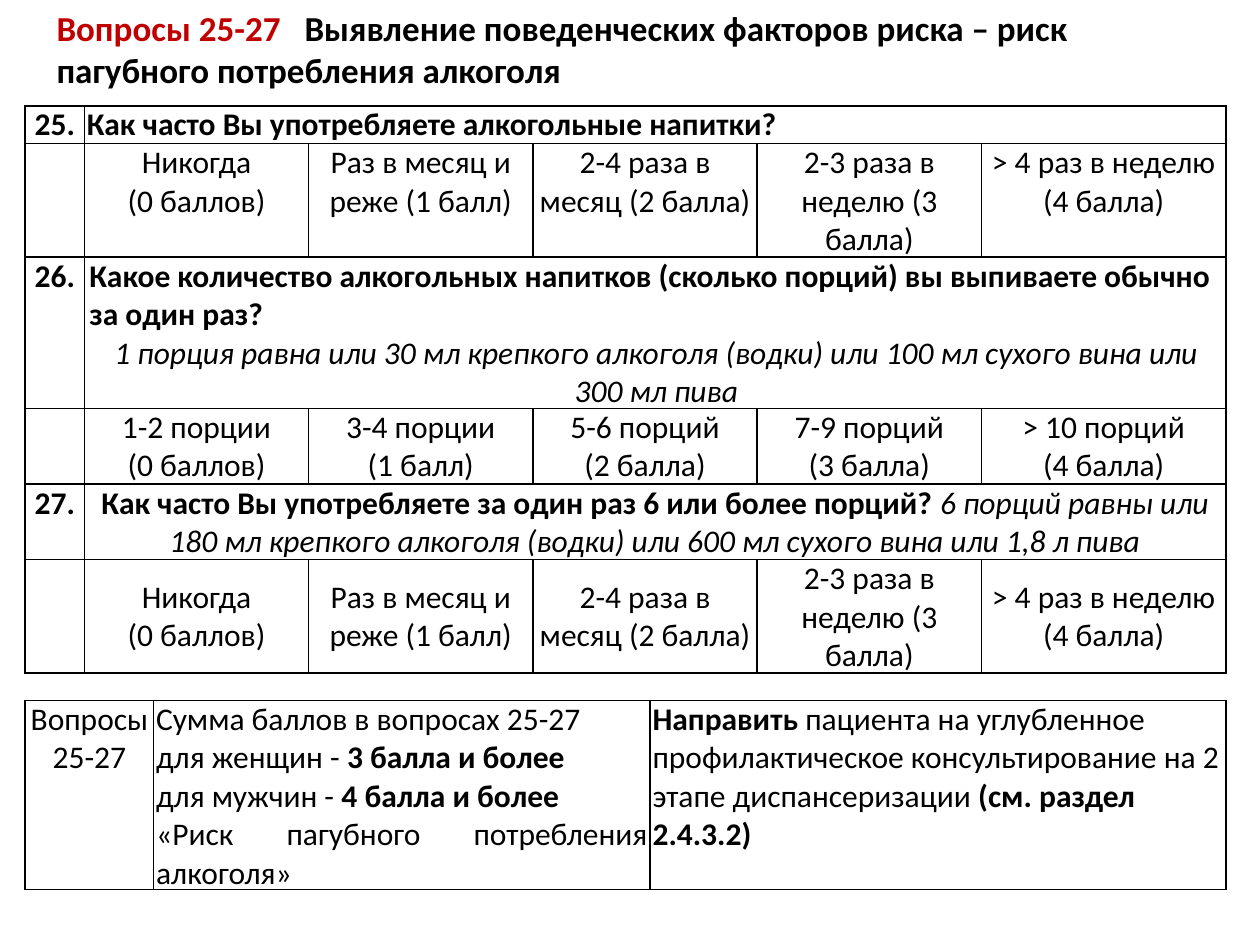
from dataclasses import dataclass
from lxml import etree
from pptx import Presentation
from pptx import util as u
from pptx.dml.color import RGBColor
from pptx.enum import text as t
from pptx.oxml.ns import qn

LEFT, MID, JUST = t.PP_ALIGN.LEFT, t.PP_ALIGN.CENTER, t.PP_ALIGN.JUSTIFY
TOP, CORE = t.MSO_ANCHOR.TOP, t.MSO_ANCHOR.MIDDLE


@dataclass(frozen=True)
class Theme:
    """Colours, font and sizes of the slide."""
    ink: str = "000000"
    mark: str = "C00000"
    font: str = "Calibri"
    head: int = 20
    body: int = 18
    line: int = 1
    pad: float = 0.02


THEME = Theme()
OFTEN = ["Никогда\n(0 баллов)", "Раз в месяц и реже (1 балл)",
         "2-4 раза в месяц (2 балла)", "2-3 раза в неделю (3 балла)",
         "> 4 раз в неделю (4 балла)"]
COUNT = ["1-2 порции\n(0 баллов)", "3-4 порции\n(1 балл)",
         "5-6 порций\n(2 балла)", "7-9 порций\n(3 балла)",
         "> 10 порций\n(4 балла)"]
ASKS = [
    ("25.", [(LEFT, [("Как часто Вы употребляете алкогольные напитки?", "b")])],
     OFTEN, TOP, 0),
    ("26.", [(LEFT, [("Какое количество алкогольных напитков (сколько порций) "
                      "вы выпиваете обычно за один раз?", "b")]),
             (MID, [("1 порция равна или 30 мл крепкого алкоголя (водки) или "
                     "100 мл сухого вина или 300 мл пива", "i")])],
     COUNT, CORE, 0.02),
    ("27.", [(MID, [("Как часто Вы употребляете за один раз 6 или более порций? ", "b"),
                    ("6 порций равны или 180 мл крепкого алкоголя (водки) или "
                     "600 мл сухого вина или 1,8 л пива", "i")])],
     OFTEN, CORE, 0),
]
RESULT = [
    [(MID, [("Вопросы", "")]), (MID, [("25-27", "")])],
    [(JUST, [("Сумма баллов в вопросах 25-27", "")]),
     (JUST, [("для женщин - ", ""), ("3 балла и более", "b")]),
     (JUST, [("для мужчин - ", ""), ("4 балла и более", "b")]),
     (JUST, [("«Риск пагубного потребления алкоголя»", "")])],
    [(LEFT, [("Направить ", "b"),
             ("пациента на углубленное профилактическое консультирование на 2 "
              "этапе диспансеризации ", ""),
             ("(см. раздел 2.4.3.2)", "b")])],
]


def assign(obj, **vals):
    """Set attributes from format values."""
    for key, val in vals.items():
        setattr(obj, key, val)


def write(frame, paras, size, inset=0):
    """Fill a text frame with aligned paragraphs of styled runs."""
    for n, (align, runs) in enumerate(paras):
        para = frame.paragraphs[0] if n == 0 else frame.add_paragraph()
        para.alignment = align
        if inset:
            para._p.get_or_add_pPr().set("marL", str(u.Inches(inset)))
        for words, style in runs:
            run = para.add_run()
            run.text = words
            assign(run.font, name=THEME.font, size=u.Pt(size),
                   bold="b" in style, italic="i" in style)
            hue = THEME.mark if "r" in style else THEME.ink
            run.font.color.rgb = RGBColor.from_string(hue)


def edge(cell):
    """Draw the four borders of a cell."""
    props = cell._tc.get_or_add_tcPr()
    for n, side in enumerate(("lnL", "lnR", "lnT", "lnB")):
        line = etree.Element(qn(f"a:{side}"), w=str(u.Pt(THEME.line)))
        fill = etree.SubElement(line, qn("a:solidFill"))
        etree.SubElement(fill, qn("a:srgbClr"), val=THEME.ink)
        props.insert(n, line)


def grid(slide, top, cols, rows):
    """Add a plain bordered table."""
    frame = slide.shapes.add_table(len(rows), len(cols), u.Inches(0.2), u.Inches(top),
                                   u.Inches(sum(cols)), u.Inches(sum(rows)))
    table = frame.table
    assign(table, first_row=False, horz_banding=False)
    for col, width in zip(table.columns, cols):
        col.width = u.Inches(width)
    for row, height in zip(table.rows, rows):
        row.height = u.Inches(height)
    pad = u.Inches(THEME.pad)
    for cell in table.iter_cells():
        assign(cell, margin_left=pad, margin_right=pad, margin_top=0, margin_bottom=0)
        cell.text_frame.paragraphs[0].font.size = u.Pt(THEME.body)
        cell.fill.background()
        edge(cell)
    return table


def fill(cell, paras, inset=0):
    """Write body text into a cell."""
    write(cell.text_frame, paras, THEME.body, inset)


def title(slide):
    """Add the heading."""
    box = slide.shapes.add_textbox(*map(u.Inches, (0.35, 0, 9.29, 0.77)))
    box.text_frame.word_wrap = True
    write(box.text_frame, [(LEFT, [
        ("Вопросы 25-27   ", "br"),
        ("Выявление поведенческих факторов риска – риск пагубного "
         "потребления алкоголя", "b")])], THEME.head)


def survey(slide):
    """Add the table of questions and answers."""
    table = grid(slide, 0.84, [0.47] + [1.78] * 4 + [1.94],
                 [0.3, 0.9, 1.2, 0.6, 0.6, 0.9])
    for n, (num, ask, picks, anchor, inset) in enumerate(ASKS):
        row = 2 * n
        fill(table.cell(row, 0), [(MID, [(num, "b")])])
        table.cell(row, 1).merge(table.cell(row, 5))
        fill(table.cell(row, 1), ask, inset)
        for col, pick in enumerate(picks, 1):
            cell = table.cell(row + 1, col)
            cell.vertical_anchor = anchor
            fill(cell, [(MID, [(part, "")]) for part in pick.split("\n")])


def result(slide):
    """Add the table with the score and the advice."""
    table = grid(slide, 5.56, [1.02, 3.94, 4.57], [1.5])
    for col, paras in enumerate(RESULT):
        fill(table.cell(0, col), paras)


def main():
    """Build and save the slide."""
    deck = Presentation()
    assign(deck, slide_width=u.Inches(10), slide_height=u.Inches(7.5))
    slide = deck.slides.add_slide(deck.slide_layouts[6])
    title(slide)
    survey(slide)
    result(slide)
    deck.save("out.pptx")


if __name__ == "__main__":
    main()
